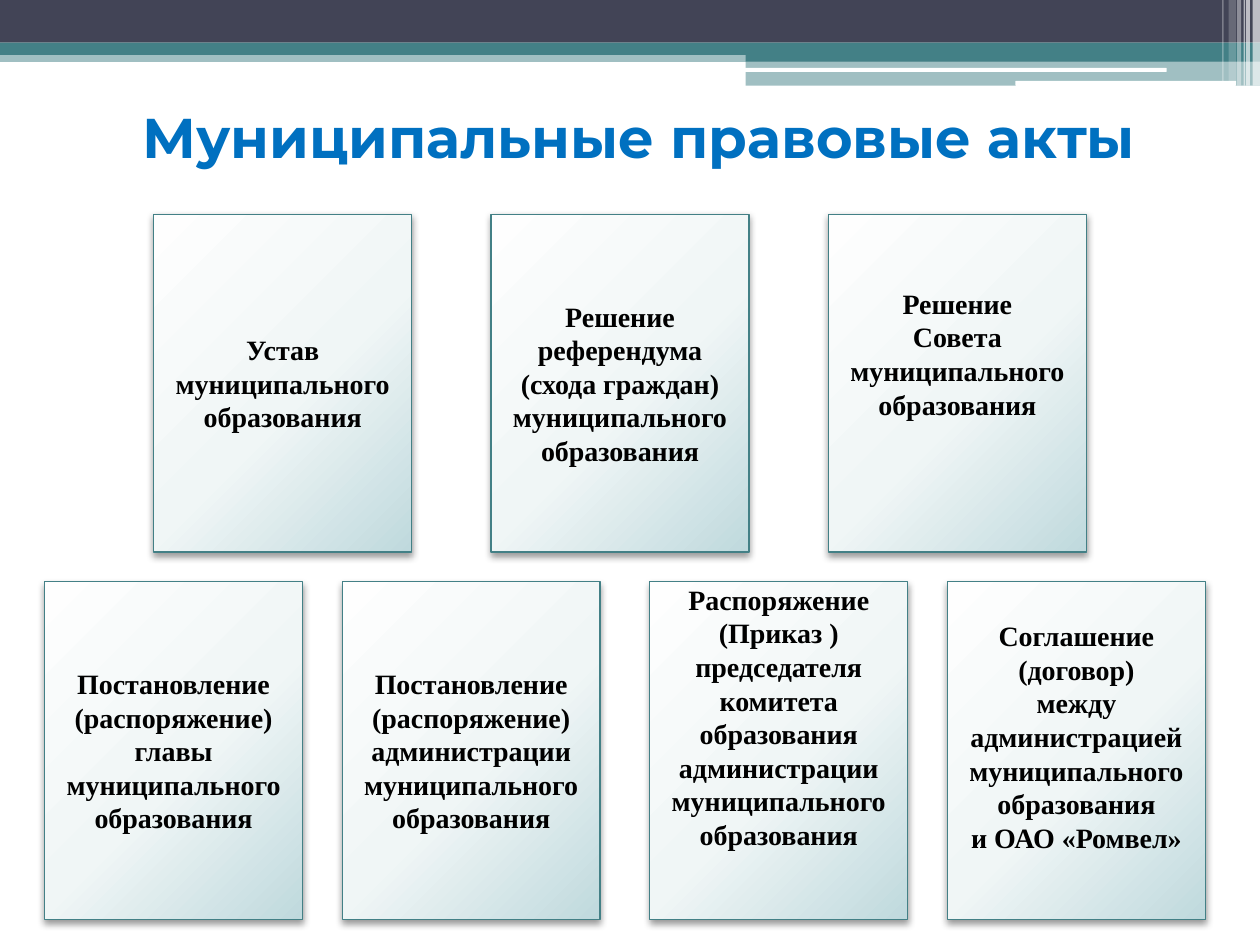
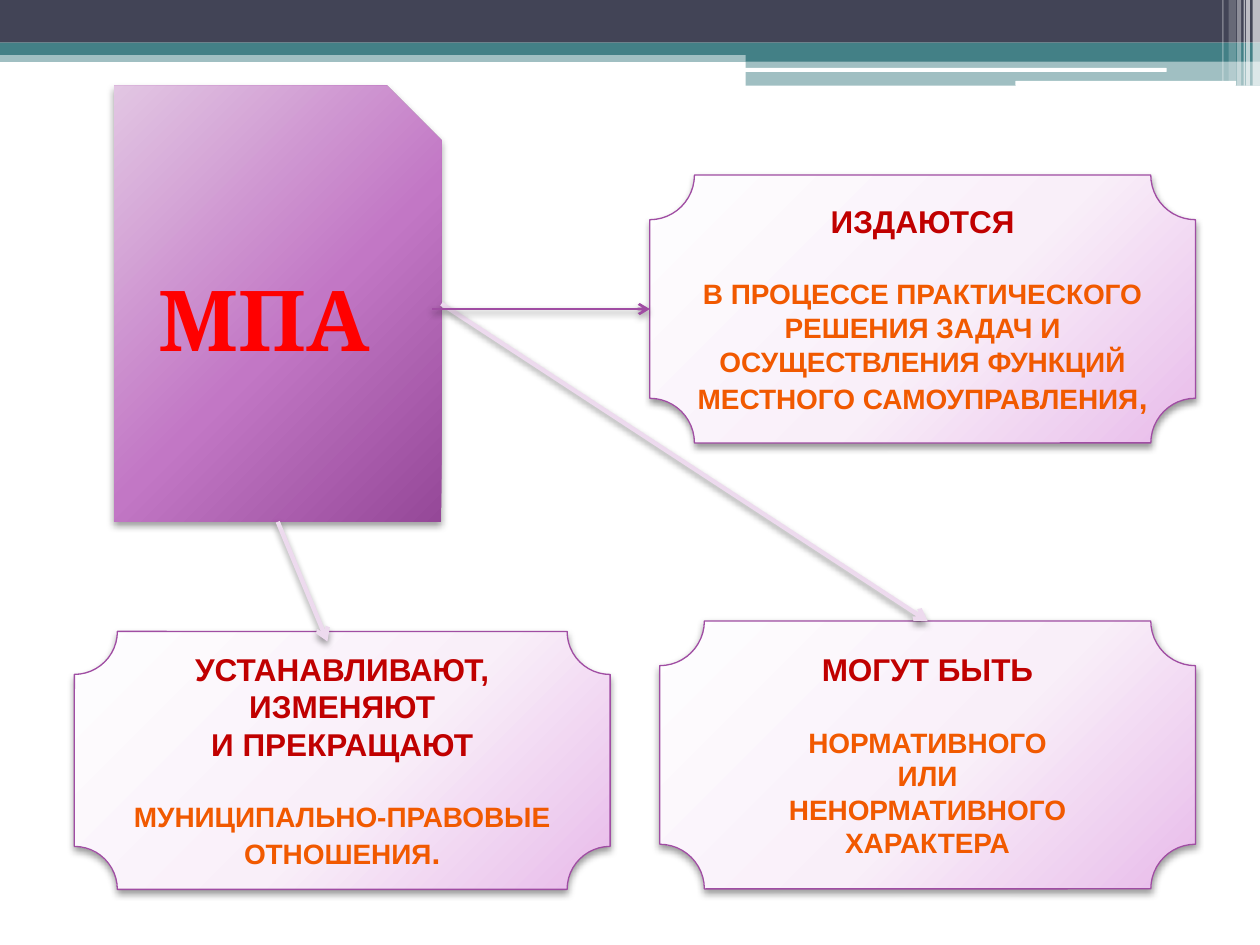
"""Builds two slides about municipal legal acts."""
import pptx
import pptx.dml.color
import pptx.enum.shapes
import pptx.enum.text
import pptx.oxml
import pptx.oxml.ns
import pptx.util

Cm, Pt = pptx.util.Cm, pptx.util.Pt
RGB = pptx.dml.color.RGBColor.from_string
SHAPE = pptx.enum.shapes.MSO_SHAPE
CENTER = pptx.enum.text.PP_ALIGN.CENTER
ANCHOR = pptx.enum.text.MSO_ANCHOR
NS = pptx.oxml.ns.nsdecls("a")

COLORS = {
    "navy": "424456", "teal": "438086", "white": "FFFFFF", "black": "000000",
    "title": "0070C0", "purple": "A04DA3", "lilac": "EDDAEE",
    "heading": "C00000", "body": "F15900", "acronym": "FF0000",
}
GRADIENTS = {
    "teal": ("FEFEFE", "F0F6F6", "BFD9DD"),
    "pink": ("FEFEFF", "F9EFF9", "E8BBEA"),
    "purple": ("E2C6E3", "C277C5", "954898"),
}
FORMATS = {
    "title": {"name": "Montserrat", "size": Pt(32), "bold": True},
    "black": {"name": "Times New Roman", "size": Pt(16), "bold": True},
    "heading": {"name": "Arial", "size": Pt(18), "bold": True},
    "body": {"name": "Arial", "size": Pt(16), "bold": True},
    "acronym": {"name": "Cambria", "size": Pt(48), "bold": True},
}
SHADOW = (
    f'<a:effectLst {NS}><a:outerShdw blurRad="52000" dist="25400" dir="5400000" rotWithShape="0">'
    '<a:srgbClr val="000000"><a:alpha val="40000"/></a:srgbClr></a:outerShdw></a:effectLst>'
)


def add_card(slide, geometry, place, gradient, outline=None):
    """Add a shaded card with a radial gradient."""
    card = slide.shapes.add_shape(geometry, *map(Cm, place))
    stops = "".join(
        f'<a:gs pos="{position}"><a:srgbClr val="{color}"/></a:gs>'
        for position, color in zip((0, 55000, 100000), GRADIENTS[gradient])
    )
    card.element.xpath("./p:spPr/a:prstGeom")[0].addnext(pptx.oxml.parse_xml(
        f'<a:gradFill {NS} rotWithShape="1"><a:gsLst>{stops}</a:gsLst><a:path path="circle">'
        '<a:fillToRect l="-40000" t="-90000" r="140000" b="190000"/></a:path></a:gradFill>'
    ))
    if outline:
        card.line.color.rgb = RGB(COLORS[outline])
        card.line.width = Pt(0.75)
    else:
        card.line.fill.background()
    card.element.spPr.append(pptx.oxml.parse_xml(SHADOW))
    card.text_frame.word_wrap = True
    card.text_frame.vertical_anchor = ANCHOR.MIDDLE
    return card


def write_lines(frame, lines, role, gap=0):
    """Write centred paragraphs, with a gap above the first one."""
    for number, line in enumerate(lines):
        paragraph = frame.add_paragraph() if frame.text else frame.paragraphs[0]
        paragraph.alignment = CENTER
        if gap and number == 0:
            paragraph.space_before = Pt(gap)
        run = paragraph.add_run()
        run.text = line
        for attribute, value in FORMATS[role].items():
            setattr(run.font, attribute, value)
        run.font.color.rgb = RGB(COLORS[role])


deck = pptx.Presentation()
deck.slide_width, deck.slide_height = Cm(25.4), Cm(19.05)
acts = deck.slides.add_slide(deck.slide_layouts[5])
features = deck.slides.add_slide(deck.slide_layouts[6])

bands = [
    (SHAPE.RECTANGLE, (0, 1.02, 25.4, 0.23), "teal", 50),
    (SHAPE.RECTANGLE, (0, 0, 25.4, 0.86), "navy", 100),
    (SHAPE.RECTANGLE, (0, 0.86, 25.4, 0.25), "teal", 100),
    (SHAPE.RECTANGLE, (15.03, 0.99, 10.37, 0.25), "teal", 100),
    (SHAPE.RECTANGLE, (15.03, 1.23, 10.37, 0.5), "teal", 50),
    (SHAPE.ROUNDED_RECTANGLE, (15.01, 1.37, 8.51, 0.08), "white", 100),
    (SHAPE.ROUNDED_RECTANGLE, (20.47, 1.63, 4.45, 0.1), "white", 100),
]
for left, width, height, opacity in [
    (25.25, 0.15, 1.73, 65), (25.12, 0.08, 1.73, 65), (25.07, 0.03, 1.73, 60),
    (24.94, 0.08, 1.73, 40), (24.77, 0.15, 1.63, 20), (24.64, 0.03, 1.63, 30),
]:
    bands.append((SHAPE.RECTANGLE, (left, 0, width, height), "white", opacity))

for number, (geometry, place, color, opacity) in enumerate(bands):
    band = acts.shapes.add_shape(geometry, *map(Cm, place))
    band.shadow.inherit = False
    band.fill.solid()
    band.fill.fore_color.rgb = RGB(COLORS[color])
    band.line.fill.background()
    if opacity < 100:
        band.element.xpath("./p:spPr/a:solidFill/a:srgbClr")[0].append(
            pptx.oxml.parse_xml(f'<a:alpha {NS} val="{opacity * 1000}"/>'))
    band.element.xpath("./p:nvSpPr/p:cNvPr")[0].set("id", str(100 + number))
    deck.slide_master.shapes.element.insert(2 + number, band.element)

heading = acts.shapes.title
heading.left, heading.top, heading.width, heading.height = map(Cm, (2.24, 1.93, 21.29, 1.63))
heading.text_frame.word_wrap = False
heading.text_frame.auto_size = pptx.enum.text.MSO_AUTO_SIZE.SHAPE_TO_FIT_TEXT
heading.text_frame.vertical_anchor = ANCHOR.TOP
write_lines(heading.text_frame, ["Муниципальные правовые акты"], "title")

act_cards = [
    (3.1, 4.32, 0, ["Устав муниципального образования"]),
    (9.9, 4.32, 0, ["Решение референдума (схода граждан) муниципального образования"]),
    (16.7, 4.32, 1.19, ["Решение", "Совета", "муниципального образования"]),
    (0.9, 11.73, 0, ["Постановление", "(распоряжение)", "главы муниципального образования"]),
    (6.9, 11.73, 0, ["Постановление", "(распоряжение)", "администрации",
                     "муниципального образования"]),
    (13.1, 11.73, 1.37, ["Распоряжение (Приказ ) председателя комитета образования",
                         "администрации муниципального образования"]),
    (19.1, 11.73, 0.58, ["Соглашение", "(договор)", "между",
                         "администрацией муниципального образования", "и ОАО «Ромвел»"]),
]
for left, top, lift, lines in act_cards:
    act = add_card(acts, SHAPE.RECTANGLE, (left, top, 5.2, 6.81), "teal", "teal")
    act.text_frame.margin_bottom = Cm(0.13 + lift)
    write_lines(act.text_frame, lines, "black")

feature_cards = [
    ((13.1, 3.53, 11, 5.4), ["ИЗДАЮТСЯ"],
     ["В ПРОЦЕССЕ ПРАКТИЧЕСКОГО РЕШЕНИЯ ЗАДАЧ И ОСУЩЕСТВЛЕНИЯ ФУНКЦИЙ "
      "МЕСТНОГО САМОУПРАВЛЕНИЯ"], ","),
    ((1.5, 12.73, 10.8, 5.2), ["УСТАНАВЛИВАЮТ,", "ИЗМЕНЯЮТ", "И ПРЕКРАЩАЮТ"],
     ["МУНИЦИПАЛЬНО-ПРАВОВЫЕ", "ОТНОШЕНИЯ"], "."),
    ((13.3, 12.52, 10.8, 5.4), ["МОГУТ БЫТЬ"],
     ["НОРМАТИВНОГО", "ИЛИ", "НЕНОРМАТИВНОГО ХАРАКТЕРА"], ""),
]
plaques = []
for place, topic, details, ending in feature_cards:
    plaque = add_card(features, SHAPE.PLAQUE, place, "pink", "purple")
    write_lines(plaque.text_frame, topic, "heading")
    write_lines(plaque.text_frame, details, "body", gap=21)
    if ending:
        mark = plaque.text_frame.paragraphs[-1].add_run()
        mark.text = ending
        for attribute, value in FORMATS["heading"].items():
            setattr(mark.font, attribute, value)
        mark.font.color.rgb = RGB(COLORS["body"])
    plaques.append(plaque)
issued, established, normative = plaques

document = add_card(features, SHAPE.SNIP_1_RECTANGLE, (2.3, 1.73, 6.6, 8.79), "purple")
write_lines(document.text_frame, ["МПА"], "acronym")

for ends, source, target, color, width in [
    ((5.6, 10.52, 6.6, 12.93), (document, 2), None, "lilac", 2.5),
    ((8.9, 6.12, 18.7, 12.52), (document, 3), (normative, 0), "lilac", 2.5),
    ((8.71, 6.23, 13.1, 6.23), None, (issued, 1), "purple", 1.5),
]:
    arrow = features.shapes.add_connector(
        pptx.enum.shapes.MSO_CONNECTOR.STRAIGHT, *map(Cm, ends))
    if source:
        arrow.begin_connect(*source)
    if target:
        arrow.end_connect(*target)
    arrow.line.color.rgb = RGB(COLORS[color])
    arrow.line.width = Pt(width)
    arrow.element.xpath("./p:spPr/a:ln")[0].append(
        pptx.oxml.parse_xml(f'<a:tailEnd {NS} type="arrow"/>'))
    arrow.element.spPr.append(pptx.oxml.parse_xml(SHADOW))

deck.save("out.pptx")
